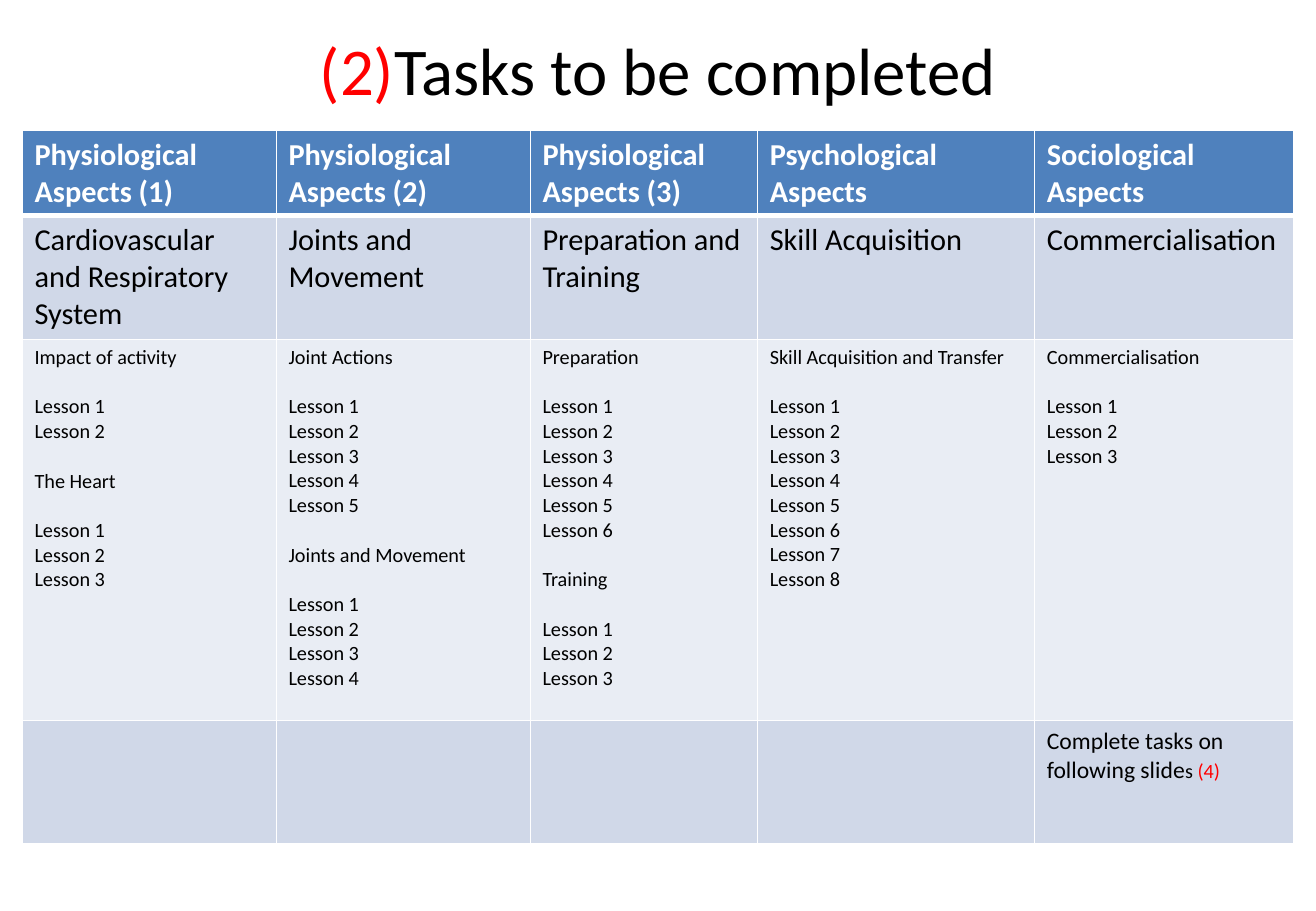
from dataclasses import dataclass

from lxml import etree
from pptx import Presentation
from pptx import util as u
from pptx.dml.color import RGBColor
from pptx.enum import text
from pptx.oxml import ns


@dataclass(frozen=True)
class Theme:
    font: str = "Calibri"
    ink: str = "000000"
    accent: str = "FF0000"
    paper: str = "FFFFFF"
    header: str = "4F81BD"
    dark_band: str = "D0D8E8"
    light_band: str = "E9EDF4"
    title_size: float = 39.6
    head_size: float = 18
    note_size: float = 14
    body_size: float = 12
    body_line: float = 14.65
    rule: float = 1
    header_rule: float = 3


THEME = Theme()


@dataclass(frozen=True)
class Span:
    words: str
    size: float
    color: str = THEME.ink
    bold: bool = False


@dataclass(frozen=True)
class Line:
    spans: tuple[Span, ...]
    before: float = 0
    after: float = 0


@dataclass(frozen=True)
class Topic:
    name: str
    lessons: int


@dataclass(frozen=True)
class Aspect:
    heading: str
    unit: str
    width: float
    topics: tuple[Topic, ...]
    note: tuple[Span, ...] = ()


@dataclass(frozen=True)
class Band:
    height: float
    fill: str
    top_rule: float = THEME.rule
    bottom_rule: float = THEME.rule


@dataclass(frozen=True)
class Area:
    """Position and size in percent of the slide."""
    left: float
    top: float
    width: float
    height: float


SLIDE_WIDTH, SLIDE_HEIGHT = u.Inches(10.83), u.Inches(7.5)
TITLE_AREA = Area(5, 4, 90, 7.2)
TABLE_AREA = Area(1.7, 14.3, 96.6, 78.3)

TITLE = Line((Span("(2)", THEME.title_size, THEME.accent),
              Span("Tasks to be completed", THEME.title_size)))
CLOSING_NOTE = (Span("Complete tasks on following slide", THEME.note_size),
                Span("s", THEME.body_size),
                Span(" (4)", THEME.body_size, THEME.accent))

ASPECTS = (
    Aspect("Physiological Aspects (1)", "Cardiovascular and Respiratory System", 2.09,
           (Topic("Impact of activity", 2), Topic("The Heart", 3))),
    Aspect("Physiological Aspects (2)", "Joints and Movement", 2.09,
           (Topic("Joint Actions", 5), Topic("Joints and Movement", 4))),
    Aspect("Physiological Aspects (3)", "Preparation and Training", 1.87,
           (Topic("Preparation", 6), Topic("Training", 3))),
    Aspect("Psychological Aspects", "Skill Acquisition", 2.28,
           (Topic("Skill Acquisition and Transfer", 8),)),
    Aspect("Sociological Aspects", "Commercialisation", 2.13,
           (Topic("Commercialisation", 3),), CLOSING_NOTE),
)

BANDS = (
    Band(0.7, THEME.header, bottom_rule=THEME.header_rule),
    Band(1.02, THEME.dark_band, top_rule=THEME.header_rule),
    Band(3.14, THEME.light_band),
    Band(1.01, THEME.dark_band),
)


def place(area: Area) -> tuple[int, int, int, int]:
    return (int(SLIDE_WIDTH * area.left / 100), int(SLIDE_HEIGHT * area.top / 100),
            int(SLIDE_WIDTH * area.width / 100), int(SLIDE_HEIGHT * area.height / 100))


def write(frame, lines: list[Line]) -> None:
    for index, line in enumerate(lines):
        paragraph = frame.paragraphs[0] if index == 0 else frame.add_paragraph()
        paragraph.space_before = u.Pt(line.before)
        paragraph.space_after = u.Pt(line.after)
        for span in line.spans:
            run = paragraph.add_run()
            run.text = span.words
            run.font.name = THEME.font
            run.font.size = u.Pt(span.size)
            run.font.bold = span.bold
            run.font.color.rgb = RGBColor.from_string(span.color)


def topic_lines(topics: tuple[Topic, ...]) -> list[Line]:
    """Set each topic name one line apart from the lessons around it."""
    lines = []
    for topic in topics:
        lines.append(Line((Span(topic.name, THEME.body_size),),
                          before=THEME.body_line if lines else 0,
                          after=THEME.body_line))
        lines += [Line((Span(f"Lesson {number}", THEME.body_size),))
                  for number in range(1, topic.lessons + 1)]
    return lines


def aspect_cells(aspect: Aspect) -> list[list[Line]]:
    """Give the contents of an aspect's column from top to bottom."""
    return [
        [Line((Span(aspect.heading, THEME.head_size, THEME.paper, True),))],
        [Line((Span(aspect.unit, THEME.head_size),))],
        topic_lines(aspect.topics),
        [Line(aspect.note)],
    ]


def style_cell(cell, band: Band) -> None:
    properties = cell._tc.get_or_add_tcPr()
    rules = {"L": THEME.rule, "R": THEME.rule, "T": band.top_rule, "B": band.bottom_rule}
    for side, width in rules.items():
        border = etree.SubElement(properties, ns.qn(f"a:ln{side}"), w=str(u.Pt(width)))
        fill = etree.SubElement(border, ns.qn("a:solidFill"))
        etree.SubElement(fill, ns.qn("a:srgbClr"), val=THEME.paper)
    cell.fill.solid()
    cell.fill.fore_color.rgb = RGBColor.from_string(band.fill)


def add_title(slide) -> None:
    frame = slide.shapes.add_textbox(*place(TITLE_AREA)).text_frame
    frame.word_wrap = True
    frame.vertical_anchor = text.MSO_ANCHOR.MIDDLE
    write(frame, [TITLE])
    frame.paragraphs[0].alignment = text.PP_ALIGN.CENTER


def add_task_table(slide) -> None:
    left, top, width, height = place(TABLE_AREA)
    table = slide.shapes.add_table(len(BANDS), len(ASPECTS), left, top, width, height).table
    total_width = sum(aspect.width for aspect in ASPECTS)
    total_height = sum(band.height for band in BANDS)
    for row, band in zip(table.rows, BANDS):
        row.height = int(height * band.height / total_height)
    for column_index, aspect in enumerate(ASPECTS):
        table.columns[column_index].width = int(width * aspect.width / total_width)
        for row_index, (band, lines) in enumerate(zip(BANDS, aspect_cells(aspect))):
            cell = table.cell(row_index, column_index)
            style_cell(cell, band)
            write(cell.text_frame, lines)


def main() -> None:
    presentation = Presentation()
    presentation.slide_width, presentation.slide_height = SLIDE_WIDTH, SLIDE_HEIGHT
    slide = presentation.slides.add_slide(presentation.slide_layouts[6])
    add_title(slide)
    add_task_table(slide)
    presentation.save("out.pptx")


if __name__ == "__main__":
    main()
